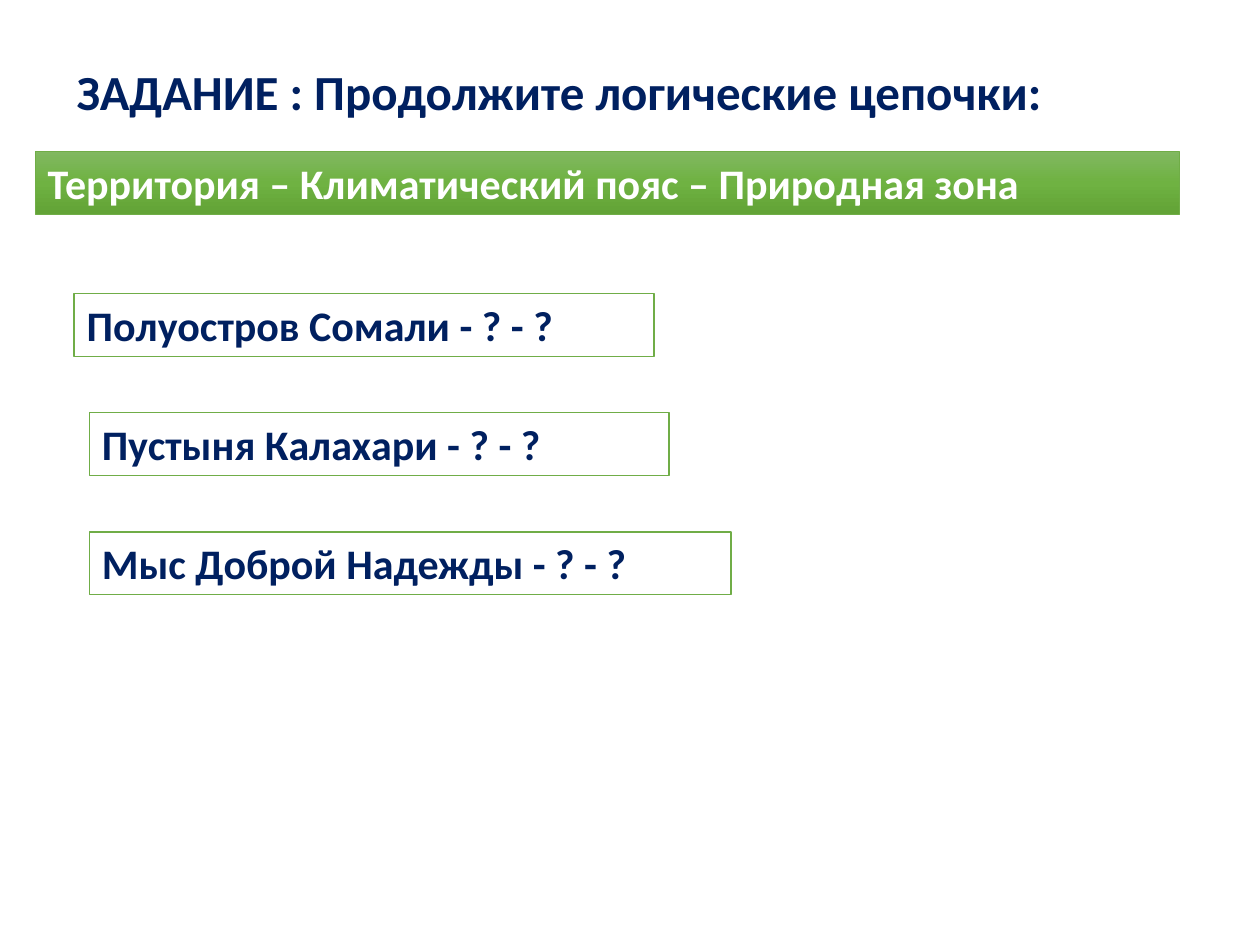
from copy import deepcopy

from pptx import Presentation
from pptx.dml.color import RGBColor
from pptx.enum.shapes import MSO_SHAPE
from pptx.enum.text import MSO_ANCHOR, MSO_AUTO_SIZE, PP_ALIGN
from pptx.util import Inches, Pt

NAVY = RGBColor(0x00, 0x20, 0x60)
WHITE = RGBColor(0xFF, 0xFF, 0xFF)
GREEN = RGBColor(0x70, 0xAD, 0x47)
BANNER_STOPS = [
    (0, RGBColor(0x81, 0xB8, 0x61)),
    (0.5, RGBColor(0x6F, 0xB2, 0x42)),
    (1, RGBColor(0x62, 0xA3, 0x36)),
]

CHAIN_TOP, CHAIN_STEP, ROW_HEIGHT = 2.33, 0.945, 0.5
CHAINS = [
    ("Полуостров Сомали - ? - ?", 0.59, 4.6),
    ("Пустыня Калахари - ? - ?", 0.71, 4.6),
    ("Мыс Доброй Надежды - ? - ?", 0.71, 5.09),
]


def write_line(shape, text, size, color, wrap=True):
    frame = shape.text_frame
    frame_format = {
        "word_wrap": wrap,
        "auto_size": MSO_AUTO_SIZE.SHAPE_TO_FIT_TEXT,
        "vertical_anchor": MSO_ANCHOR.TOP,
    }
    for name, value in frame_format.items():
        setattr(frame, name, value)
    paragraph = frame.paragraphs[0]
    paragraph.alignment = PP_ALIGN.LEFT
    run = paragraph.add_run()
    run.text = text
    font_format = {"name": "Calibri", "size": Pt(size), "bold": True}
    for name, value in font_format.items():
        setattr(run.font, name, value)
    run.font.color.rgb = color


def add_framed_box(slide, box, line_width):
    shape = slide.shapes.add_shape(MSO_SHAPE.RECTANGLE, *map(Inches, box))
    shape.shadow.inherit = False
    shape.line.color.rgb = GREEN
    shape.line.width = Pt(line_width)
    return shape


def fill_with_gradient(shape, stops):
    """Fill from top to bottom with (position, colour) stops."""
    shape.fill.gradient()
    shape.fill.gradient_angle = 270
    stop_list = shape._element.spPr.xpath("./a:gradFill/a:gsLst")[0]
    while len(stop_list) < len(stops):
        stop_list.append(deepcopy(stop_list[-1]))
    for stop, (position, color) in zip(shape.fill.gradient_stops, stops):
        stop.position = position
        stop.color.rgb = color


def add_heading(slide, box):
    heading = slide.shapes.add_textbox(*map(Inches, box))
    write_line(heading, "ЗАДАНИЕ : Продолжите логические цепочки:", 28, NAVY, wrap=False)


def add_banner(slide, box):
    banner = add_framed_box(slide, box, 0.5)
    fill_with_gradient(banner, BANNER_STOPS)
    write_line(banner, "Территория – Климатический пояс – Природная зона", 24, WHITE)


def add_chain(slide, box, text):
    chain = add_framed_box(slide, box, 1)
    chain.fill.solid()
    chain.fill.fore_color.rgb = WHITE
    write_line(chain, text, 24, NAVY)


def main():
    presentation = Presentation()
    presentation.slide_width = Inches(10)
    presentation.slide_height = Inches(7.5)
    slide = presentation.slides.add_slide(presentation.slide_layouts[6])

    add_heading(slide, (0.51, 0.44, 7.93, 0.57))
    add_banner(slide, (0.28, 1.2, 9.08, ROW_HEIGHT))
    for row, (text, left, width) in enumerate(CHAINS):
        top = CHAIN_TOP + row * CHAIN_STEP
        add_chain(slide, (left, top, width, ROW_HEIGHT), text)

    presentation.save("out.pptx")


if __name__ == "__main__":
    main()
